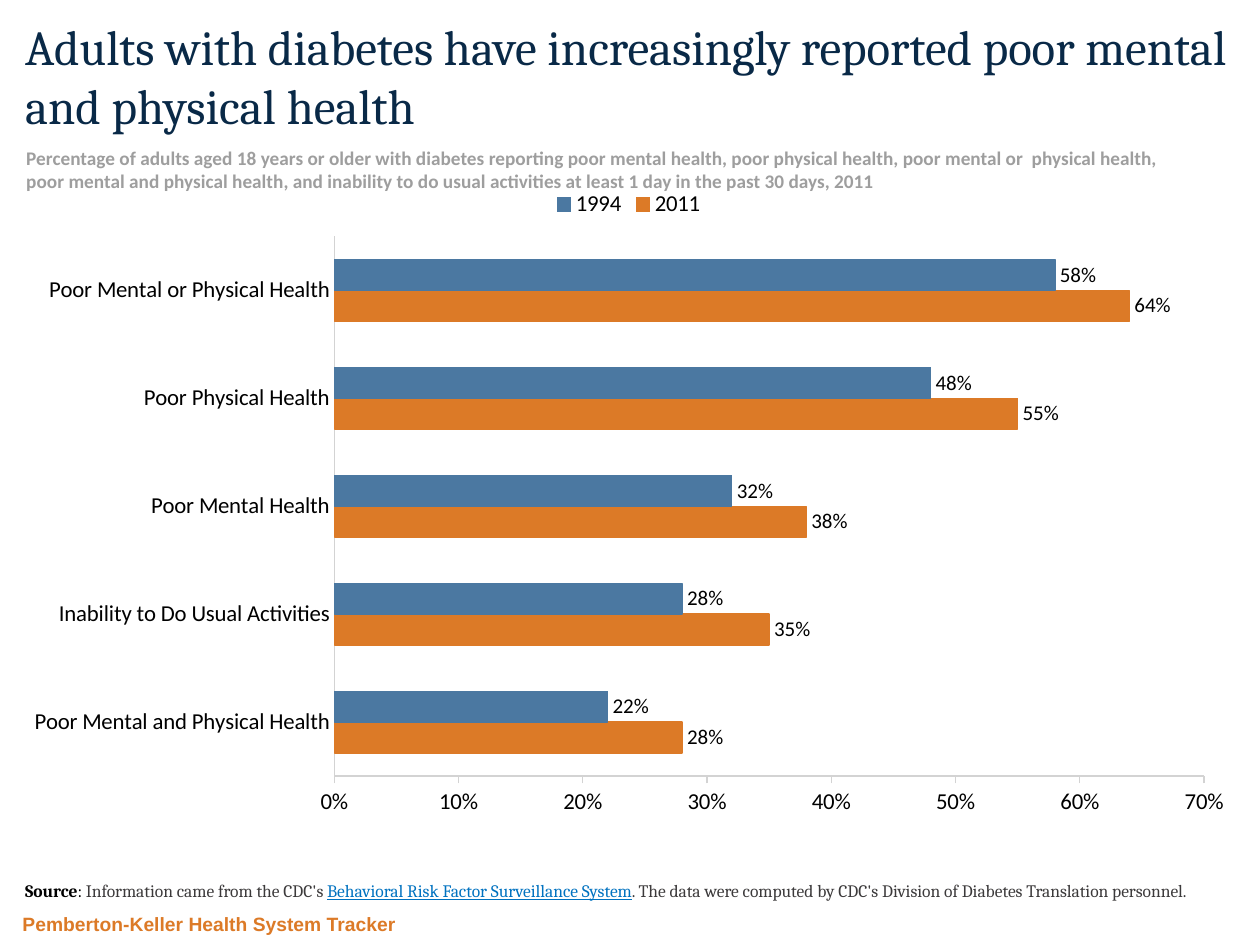
from lxml import etree
from pptx import Presentation
from pptx.chart.data import CategoryChartData
from pptx.dml.color import RGBColor
from pptx.enum.chart import XL_CHART_TYPE, XL_LABEL_POSITION, XL_LEGEND_POSITION, XL_TICK_MARK
from pptx.enum.text import MSO_ANCHOR, MSO_AUTO_SIZE, PP_ALIGN
from pptx.oxml.ns import qn
from pptx.util import Inches, Pt

BAR = XL_CHART_TYPE.BAR_CLUSTERED
OUTER = XL_LABEL_POSITION.OUTSIDE_END
TOP = XL_LEGEND_POSITION.TOP
NONE, OUT = XL_TICK_MARK.NONE, XL_TICK_MARK.OUTSIDE
BOTTOM, MIDDLE = MSO_ANCHOR.BOTTOM, MSO_ANCHOR.MIDDLE
FIXED, GROW = MSO_AUTO_SIZE.NONE, MSO_AUTO_SIZE.SHAPE_TO_FIT_TEXT
LEFT = PP_ALIGN.LEFT


def color(code):
    return RGBColor.from_string(code)


def add_run(para, text, face, size, code, bold=False, under=False):
    run = para.add_run()
    run.text = text
    font = run.font
    font.name, font.size, font.bold = face, Pt(size), bold
    font.underline = under
    font.color.rgb = color(code)


prs = Presentation()
prs.slide_width, prs.slide_height = Inches(10), Inches(7.5)
slide = prs.slides.add_slide(prs.slide_layouts[5])

title = slide.shapes.title
title.left, title.top = Inches(0.1), Inches(0.1)
title.width, title.height = Inches(9.8), Inches(1)
frame = title.text_frame
frame.word_wrap = True
frame.auto_size = FIXED
frame.vertical_anchor = MIDDLE
para = frame.paragraphs[0]
para.alignment = LEFT
add_run(para, "Adults with diabetes have increasingly reported poor mental and physical health",
        "Cambria", 28, "092947")

data = CategoryChartData(number_format="0%")
data.categories = [
    "Poor Mental and Physical Health",
    "Inability to Do Usual Activities",
    "Poor Mental Health",
    "Poor Physical Health",
    "Poor Mental or Physical Health",
]
data.add_series("2011", [0.28, 0.35, 0.38, 0.55, 0.64])
data.add_series("1994", [0.22, 0.28, 0.32, 0.48, 0.58])
chart = slide.shapes.add_chart(
    BAR, Inches(0.08), Inches(1.4), Inches(9.82), Inches(5.18), data).chart
chart.has_title = False
chart.font.name, chart.font.size = "Calibri", Pt(13)
chart.font.color.rgb = color("000000")
chart.has_legend = True
chart.legend.position = TOP
chart.legend.include_in_layout = False

plot = chart.plots[0]
plot.gap_width, plot.overlap = 150, 0
plot.vary_by_categories = False
for series, code in zip(plot.series, ["DC7A27", "4B78A1"]):
    series.format.fill.solid()
    series.format.fill.fore_color.rgb = color(code)
    series.format.line.color.rgb = color(code)
    series.format.line.width = Pt(0.75)
    labels = series.data_labels
    labels.show_value = True
    labels.position = OUTER
    labels.number_format, labels.number_format_is_linked = "0%", False
    labels.font.size = Pt(12)

cats, vals = chart.category_axis, chart.value_axis
for axis, tick in [(cats, NONE), (vals, OUT)]:
    axis.major_tick_mark, axis.minor_tick_mark = tick, NONE
    axis.has_major_gridlines = False
    axis.format.line.color.rgb = color("D3D3D3")
    axis.format.line.width = Pt(0.75)
vals.minimum_scale, vals.maximum_scale, vals.major_unit = 0, 0.7, 0.1
vals.tick_labels.number_format = "0%"
vals.tick_labels.number_format_is_linked = False

area = chart.element.find(".//" + qn("c:plotArea"))
layout = area.find(qn("c:layout"))
if layout is None:
    layout = etree.Element(qn("c:layout"))
    area.insert(0, layout)
manual = etree.SubElement(layout, qn("c:manualLayout"))
for tag, val in [("layoutTarget", "inner"), ("xMode", "edge"), ("yMode", "edge"),
                 ("x", "0.262"), ("y", "0.092"), ("w", "0.703"), ("h", "0.827")]:
    etree.SubElement(manual, qn("c:" + tag)).set("val", val)

box = slide.shapes.add_textbox(Inches(0.11), Inches(1.11), Inches(9.31), Inches(0.47))
frame = box.text_frame
frame.word_wrap = False
frame.auto_size = GROW
lines = [
    "Percentage of adults aged 18 years or older with diabetes reporting poor mental health, "
    "poor physical health, poor mental or  physical health,",
    "poor mental and physical health, and inability to do usual activities "
    "at least 1 day in the past 30 days, 2011",
]
for num, line in enumerate(lines):
    para = frame.add_paragraph() if num else frame.paragraphs[0]
    add_run(para, line, "Calibri", 11, "9E9E9E", True)

box = slide.shapes.add_textbox(Inches(0.1), Inches(6.4), Inches(9.82), Inches(0.8))
frame = box.text_frame
frame.word_wrap = True
frame.vertical_anchor = BOTTOM
para = frame.paragraphs[0]
for text, code, bold, under in [
    ("Source", "000000", True, False),
    (": ", "000000", False, False),
    ("Information came from the CDC's ", "3C3A3B", False, False),
    ("Behavioral Risk Factor Surveillance System", "0072C0", False, True),
    (". The data were computed by CDC's Division of Diabetes Translation personnel.",
     "3C3A3B", False, False),
]:
    add_run(para, text, "Cambria", 10, code, bold, under)

box = slide.shapes.add_textbox(Inches(0.08), Inches(7.17), Inches(7.98), Inches(0.3))
frame = box.text_frame
frame.word_wrap = True
frame.vertical_anchor = BOTTOM
add_run(frame.paragraphs[0], "Pemberton-Keller Health System Tracker", "Arial", 11, "DC7A27", True)

prs.save("out.pptx")
